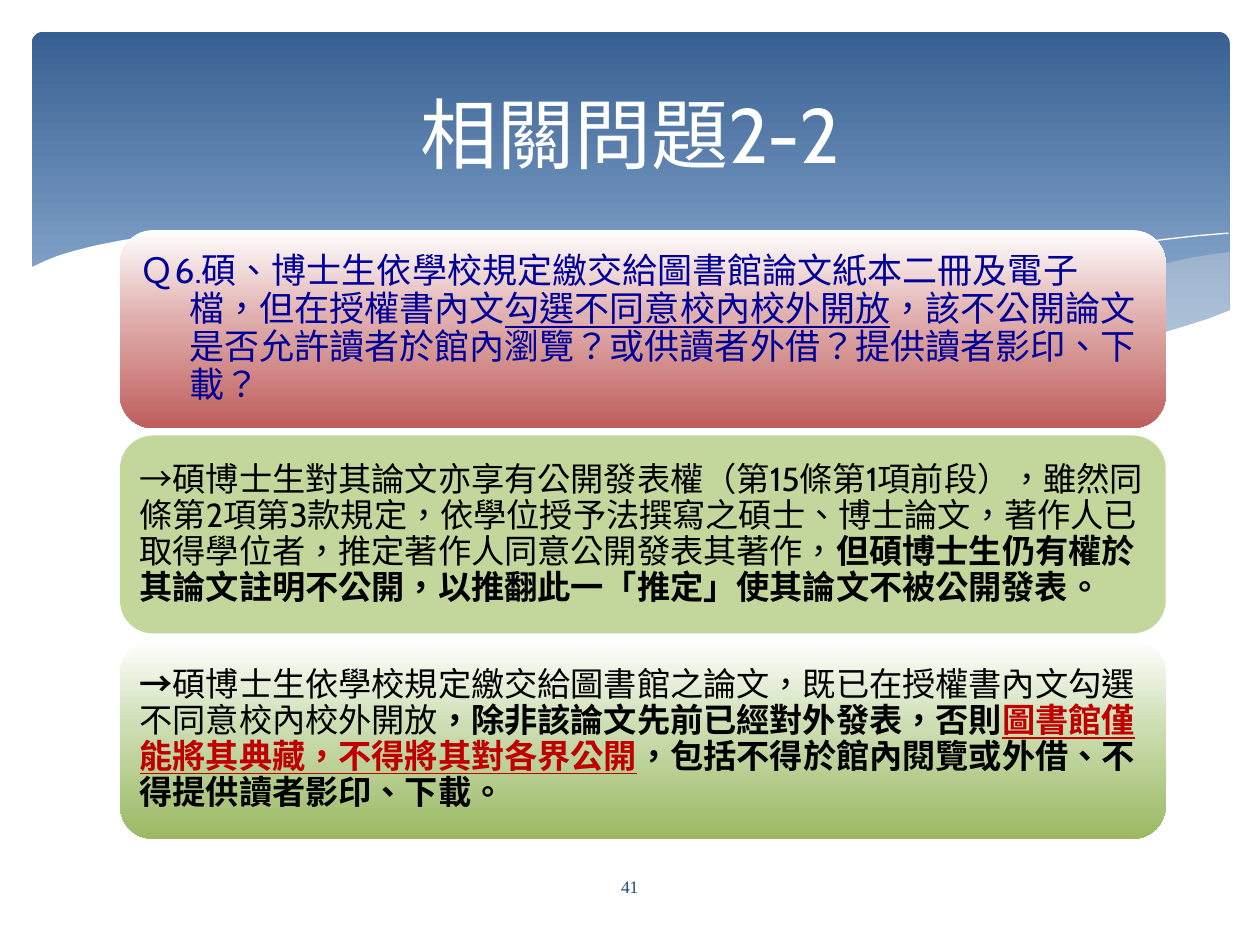
from copy import deepcopy

from lxml import etree
from pptx import Presentation
from pptx.dml.color import RGBColor
from pptx.enum.shapes import MSO_SHAPE
from pptx.enum.text import MSO_ANCHOR, PP_ALIGN
from pptx.oxml.ns import qn
from pptx.util import Cm, Pt

SLIDE_BOX = (0, 0, 25.4, 19.05)
UNIT = Cm(0.0254)  # wave points are hundredths of an inch

# Wave outlines, back to front
RIGHT_BAND = [
    (975, 200), (948, 204), (921, 210), (891, 216), (861, 223), (805, 237),
    (753, 248), (706, 257), (661, 265), (691, 269), (718, 273), (745, 275),
    (769, 277), (803, 278), (835, 277), (863, 275), (889, 272), (913, 267),
    (935, 262), (949, 257), (963, 252), (976, 247), (976, 200)]
MIDDLE_BAND = [
    (893, 273), (866, 269), (807, 260), (741, 248), (668, 231), (613, 218),
    (569, 208), (527, 200), (489, 194), (441, 189), (399, 186), (361, 186),
    (328, 187), (286, 191), (323, 196), (362, 203), (404, 211), (449, 222),
    (530, 240), (584, 252), (634, 261), (680, 268), (722, 274), (761, 277),
    (807, 279), (848, 278), (876, 275)]
LONG_CURVE = [
    (309, 195), (328, 192), (353, 189), (387, 187), (433, 187), (469, 189),
    (510, 192), (556, 197), (608, 204), (665, 213), (727, 226), (795, 242),
    (868, 261), (907, 272)]
RISING_CURVE = [
    (613, 257), (652, 246), (695, 235), (748, 223), (806, 210), (866, 199),
    (895, 194), (924, 190), (951, 187), (975, 185)]
WHITE_WAVE = [
    (977, 246), (959, 253), (940, 259), (920, 265), (899, 269), (875, 273),
    (850, 275), (823, 277), (793, 276), (761, 275), (726, 272), (688, 268),
    (647, 262), (603, 254), (555, 245), (503, 233), (447, 220), (391, 207),
    (339, 197), (292, 191), (250, 186), (211, 184), (177, 184), (146, 185),
    (119, 187), (95, 191), (75, 195), (59, 199), (46, 203), (36, 207),
    (23, 213), (23, 329), (977, 329)]

QUESTION = {"size": Pt(20), "color": "000099"}
ANSWER = {"size": Pt(19), "color": "000000"}
BOLD = {**ANSWER, "bold": True}
WARNING = {**BOLD, "color": "C00000", "underline": True}

# Each card: fill stops, hanging indent in cm, runs
CARDS = [
    ([(0, "FFFFFF"), (0.44, "E0AFAE"), (1, "BF5E5C")], 1, [
        ("Ｑ6.碩、博士生依學校規定繳交給圖書館論文紙本二冊及電子檔，但在授權書內文", QUESTION),
        ("勾選不同意校內校外開放", {**QUESTION, "underline": True}),
        ("，該不公開論文是否允許讀者於館內瀏覽？或供讀者外借？提供讀者影印、下載？", QUESTION)]),
    ([(0, "C3D69B")], 0, [
        ("→碩博士生對其論文亦享有公開發表權（第15條第1項前段），雖然同條第2項第3款規定，"
         "依學位授予法撰寫之碩士、博士論文，著作人已取得學位者，推定著作人同意公開發表其著作，", ANSWER),
        ("但碩博士生仍有權於其論文註明不公開，以推翻此一「推定」使其論文不被公開發表。", BOLD)]),
    ([(0, "FFFFFF"), (0.44, "CCDDB1"), (1, "9BB963")], 0, [
        ("→", BOLD),
        ("碩博士生依學校規定繳交給圖書館之論文，既已在授權書內文勾選不同意校內校外開放", ANSWER),
        ("，除非該論文先前已經對外發表，否則", BOLD),
        ("圖書館僅能將其典藏，不得將其對各界公開", WARNING),
        ("，包括不得於館內閱覽或外借、不得提供讀者影印、下載。", BOLD)]),
]


def color(hex_value):
    return RGBColor.from_string(hex_value)


def set_fill(shape, stops, opacity=None):
    """One stop gives a solid fill, several a gradient from top to bottom."""
    fill = shape.fill
    if len(stops) == 1:
        fill.solid()
        fill.fore_color.rgb = color(stops[0][1])
        if opacity is not None:
            rgb = shape._element.spPr.find(qn("a:solidFill"))[0]
            etree.SubElement(rgb, qn("a:alpha"), val=str(opacity * 1000))
        return
    fill.gradient()
    fill.gradient_angle = 270
    stop_list = shape._element.spPr.find(qn("a:gradFill")).find(qn("a:gsLst"))
    while len(stop_list) < len(stops):
        stop_list.append(deepcopy(stop_list[-1]))
    for stop, (position, hex_value) in zip(fill.gradient_stops, stops):
        stop.position = position
        stop.color.rgb = color(hex_value)


def add_panel(slide, box, stops, radius):
    shape = slide.shapes.add_shape(
        MSO_SHAPE.ROUNDED_RECTANGLE, *(Cm(length) for length in box))
    shape.shadow.inherit = False
    shape.adjustments[0] = radius
    shape.line.fill.background()
    set_fill(shape, stops)
    return shape


def add_runs(paragraph, runs, font_name="Cabin"):
    for text, formats in runs:
        run = paragraph.add_run()
        run.text = text
        run.font.name = font_name
        # Traditional Chinese centres the punctuation
        run._r.get_or_add_rPr().set("lang", "zh-TW")
        for name, value in formats.items():
            if name == "color":
                run.font.color.rgb = color(value)
            else:
                setattr(run.font, name, value)


def add_curve(slide, box, points, closed):
    builder = slide.shapes.build_freeform(*points[0], scale=UNIT)
    builder.add_line_segments(points[1:], close=closed)
    shape = builder.convert_to_shape(Cm(box[0]), Cm(box[1]))
    shape.shadow.inherit = False
    return shape


def add_header(slide, box):
    left, top, width, _ = box
    # Blue panel
    add_panel(slide, (left + 0.64, top + 0.64, width - 1.25, 6.86),
              [(0, "376092"), (0.9, "95B3D7")], 0.034)
    # Translucent bands
    for points, opacity in ((RIGHT_BAND, 29), (MIDDLE_BAND, 40)):
        band = add_curve(slide, box, points, True)
        set_fill(band, [(0, "EEECE1")], opacity)
        band.line.fill.background()
    # Hairlines
    for points in (LONG_CURVE, RISING_CURVE):
        curve = add_curve(slide, box, points, False)
        curve.fill.background()
        curve.line.color.rgb = color("FFFFFF")
        curve.line.width = Pt(0)
    # White wave that cuts off the panel
    wave = add_curve(slide, box, WHITE_WAVE, True)
    set_fill(wave, [(0, "FFFFFF")])
    wave.line.fill.background()


def add_cards(slide, box, gap=0.15):
    left, top, width, height = box
    card_height = (height - gap * (len(CARDS) - 1)) / len(CARDS)
    for index, (stops, indent, runs) in enumerate(CARDS):
        card_top = top + index * (card_height + gap)
        card = add_panel(slide, (left, card_top, width, card_height), stops, 0.1667)
        frame = card.text_frame
        frame.word_wrap = True
        frame.vertical_anchor = MSO_ANCHOR.MIDDLE
        for side in ("left", "top", "right", "bottom"):
            setattr(frame, f"margin_{side}", Cm(0.2))
        paragraph = frame.paragraphs[0]
        paragraph.alignment = PP_ALIGN.LEFT
        paragraph.line_spacing = 0.9
        # Punctuation stays inside the margin
        properties = paragraph._p.get_or_add_pPr()
        properties.set("hangingPunct", "0")
        if indent:
            properties.set("marL", str(Cm(indent)))
            properties.set("indent", str(-Cm(indent)))
        add_runs(paragraph, runs)


def add_label(slide, box, text, formats, font_name):
    frame = slide.shapes.add_textbox(*(Cm(length) for length in box)).text_frame
    frame.word_wrap = True
    frame.vertical_anchor = MSO_ANCHOR.MIDDLE
    frame.paragraphs[0].alignment = PP_ALIGN.CENTER
    add_runs(frame.paragraphs[0], [(text, formats)], font_name)


def main():
    presentation = Presentation()
    presentation.slide_width = Cm(SLIDE_BOX[2])
    presentation.slide_height = Cm(SLIDE_BOX[3])
    slide = presentation.slides.add_slide(presentation.slide_layouts[6])

    add_header(slide, SLIDE_BOX)
    add_cards(slide, (2.42, 4.64, 21.08, 12.27))
    # Title and page number
    add_label(slide, (1.27, 0.94, 22.86, 3.48), "相關問題2-2",
              {"size": Pt(44), "color": "FFFFFF"}, "Cabin")
    add_label(slide, (11.08, 17.37, 3.23, 1.02), "41",
              {"size": Pt(10), "color": "1F497D"}, "Times New Roman")
    presentation.save("out.pptx")


if __name__ == "__main__":
    main()
